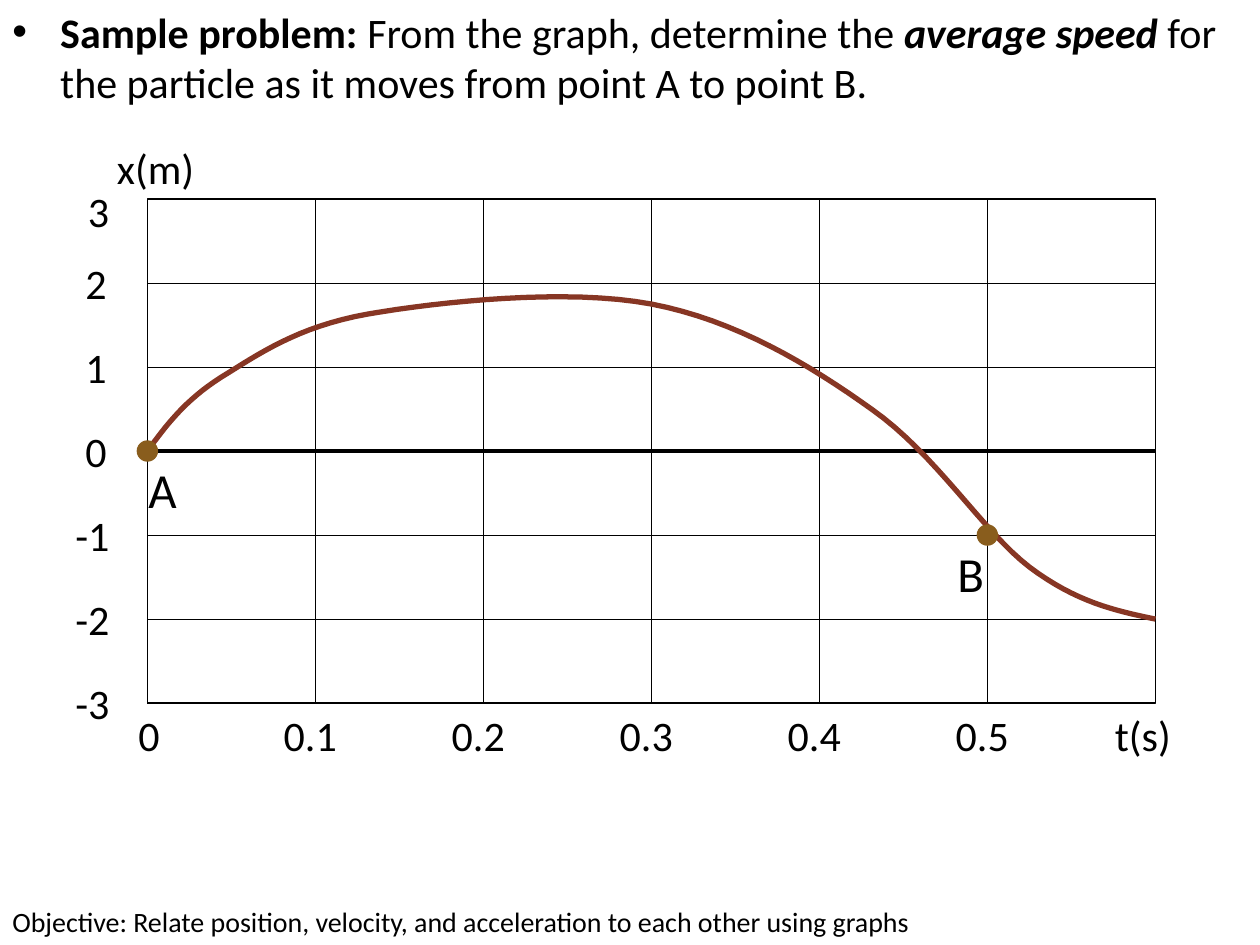
"""Build a slide with a position-time graph and a sample problem."""
import pptx
import pptx.util
import pptx.dml.color
import pptx.enum.shapes
import pptx.enum.text
import pptx.oxml
import pptx.oxml.ns

INKS = {"ink": "000000", "paper": "FFFFFF", "curve": "873624", "dot": "895D1D"}
FONT = "Calibri"
WIDE, HIGH = 10, 7.5
COLS, ROWS = 6, 6
LEFT, TOP, SPAN, RISE = 1.17, 1.58, 8, 4
COL, ROW = SPAN / COLS, RISE / ROWS
ZERO = TOP + RISE / 2

TASK = [
    ("Sample problem:", True, False),
    (" From the graph, determine the ", False, False),
    ("average speed", True, True),
    (" for the particle as it moves from point A to point B.", False, False),
]
GOAL = "Objective: Relate position, velocity, and acceleration to each other using graphs"
LEVELS = [2, 1, 0, -1, -2, -3]
TIMES = ["0.1", "0.2", "0.3", "0.4", "0.5"]
NOTES = [
    ("0", 1, 5.58, 0.4, 24),
    ("3", 0.6, 1.42, 0.4, 24),
    ("t(s)", 8.75, 5.58, 0.76, 24),
    ("x(m)", 0.83, 1.08, 0.9, 24),
    ("A", 1.08, 3.58, 0.49, 28),
    ("B", 7.5, 4.25, 0.45, 28),
]
DOTS = [(0, 0), (5, -1)]
KNOTS = [
    (0, 0), (0.11, 0.3), (0.22, 0.6), (0.44, 0.88), (0.66, 1.15),
    (0.89, 1.48), (1.31, 1.63), (1.74, 1.78), (2.5, 1.94), (3, 1.75),
    (3.5, 1.56), (3.94, 1.03), (4.31, 0.5), (4.69, -0.03), (4.97, -0.95),
    (5.25, -1.38), (5.53, -1.8), (5.76, -1.9), (6, -2),
]
STEPS = 16

inch = pptx.util.Inches
KIND = pptx.enum.shapes.MSO_SHAPE


def tint(name):
    return pptx.dml.color.RGBColor.from_string(INKS[name])


def spot(time, level):
    return LEFT + time * COL, ZERO - level * ROW


def style(run, size, bold=None, slant=None):
    font = run.font
    font.name, font.size = FONT, pptx.util.Pt(size)
    font.bold, font.italic = bold, slant
    font.color.rgb = tint("ink")


def write(shapes, text, box, size, wrap=False):
    frame = shapes.add_textbox(*map(inch, box)).text_frame
    frame.word_wrap = wrap
    if not wrap:
        frame.vertical_anchor = pptx.enum.text.MSO_ANCHOR.BOTTOM
    frame.text = text
    style(frame.paragraphs[0].runs[0], size)


def pose(shapes):
    frame = shapes.add_textbox(0, 0, inch(WIDE), inch(5.67)).text_frame
    frame.word_wrap = True
    para = frame.paragraphs[0]
    para.space_before = pptx.util.Pt(4.8)
    for text, bold, slant in TASK:
        run = para.add_run()
        run.text = text
        style(run, 24, bold, slant)
    props = para._p.get_or_add_pPr()
    props.set("marL", str(inch(0.38)))
    props.set("indent", str(-inch(0.38)))
    names = pptx.oxml.ns.nsdecls("a")
    for mark in ('buFont %s typeface="Arial"', 'buChar %s char="•"'):
        props.append(pptx.oxml.parse_xml(f"<a:{mark % names}/>"))


def rule(shapes, start, end, width):
    kind = pptx.enum.shapes.MSO_CONNECTOR.STRAIGHT
    line = shapes.add_connector(kind, *map(inch, start + end))
    line.line.color.rgb = tint("ink")
    line.line.width = pptx.util.Pt(width)
    names = pptx.oxml.ns.nsdecls("a")
    line._element.spPr.append(pptx.oxml.parse_xml(f"<a:effectLst {names}/>"))
    return line


def grid(shapes):
    frame = shapes.add_shape(KIND.RECTANGLE, *map(inch, (LEFT, TOP, SPAN, RISE)))
    frame.shadow.inherit = False
    frame.fill.solid()
    frame.fill.fore_color.rgb = tint("paper")
    frame.line.color.rgb = tint("ink")
    frame.line.width = pptx.util.Pt(0.75)
    for level in range(-3, 4):
        line = rule(shapes, spot(0, level), spot(COLS, level), 0.5 if level else 2.25)
        if level == 0:
            line.begin_connect(frame, 1)
            line.end_connect(frame, 3)
    for time in range(1, COLS + 1):
        line = rule(shapes, spot(time, 3), spot(time, -3), 0.75)
        if time == COLS / 2:
            line.begin_connect(frame, 0)
            line.end_connect(frame, 2)


def label(shapes):
    for level in LEVELS:
        left, wide = (0.5, 0.54) if level < 0 else (0.58, 0.4)
        write(shapes, str(level), (left, spot(0, level)[1] - 0.25, wide, 0.5), 24)
    for time, text in enumerate(TIMES, 1):
        write(shapes, text, (spot(time, 0)[0] - 0.35, TOP + RISE, 0.69, 0.5), 24)
    for text, left, top, wide, size in NOTES:
        write(shapes, text, (left, top, wide, size / 48), size)


def bend(four, part):
    rest = 1 - part
    loads = (rest**3, 3 * rest**2 * part, 3 * rest * part**2, part**3)
    return spot(*(sum(w * k[axis] for w, k in zip(loads, four)) for axis in (0, 1)))


def trace(shapes):
    points = [
        tuple(map(inch, bend(KNOTS[i:i + 4], step / STEPS)))
        for i in range(0, len(KNOTS) - 1, 3)
        for step in range(1, STEPS + 1)
    ]
    pen = shapes.build_freeform(*map(inch, spot(*KNOTS[0])))
    pen.add_line_segments(points, close=False)
    curve = pen.convert_to_shape()
    curve.shadow.inherit = False
    curve.fill.background()
    curve.line.color.rgb = tint("curve")
    curve.line.width = pptx.util.Pt(3)


def dot(shapes, time, level, size=0.17):
    x, y = spot(time, level)
    box = (x - size / 2, y - size / 2, size, size)
    mark = shapes.add_shape(KIND.OVAL, *map(inch, box))
    mark.shadow.inherit = False
    mark.fill.solid()
    mark.fill.fore_color.rgb = tint("dot")
    mark.line.fill.background()


def main():
    deck = pptx.Presentation()
    deck.slide_width, deck.slide_height = inch(WIDE), inch(HIGH)
    shapes = deck.slides.add_slide(deck.slide_layouts[6]).shapes
    pose(shapes)
    grid(shapes)
    label(shapes)
    trace(shapes)
    for time, level in DOTS:
        dot(shapes, time, level)
    write(shapes, GOAL, (0, HIGH - 0.37, WIDE, 0.37), 16, True)
    deck.save("out.pptx")


if __name__ == "__main__":
    main()
